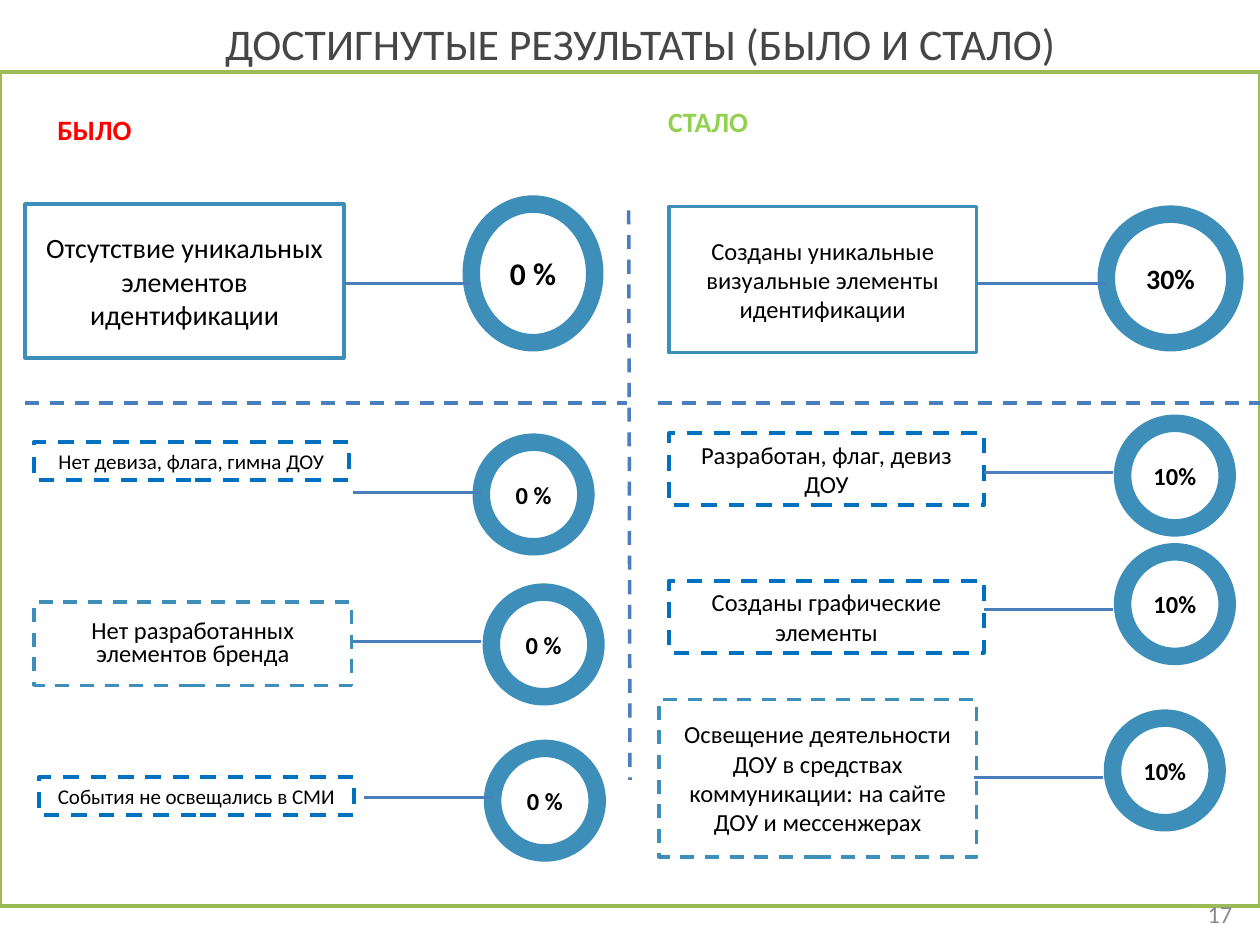
"""Build the slide that compares results before and after."""
from dataclasses import dataclass

from lxml.etree import SubElement
from pptx import Presentation
from pptx.dml.color import RGBColor
from pptx.enum.dml import MSO_LINE_DASH_STYLE as Dash
from pptx.enum.shapes import MSO_CONNECTOR_TYPE as Link, MSO_SHAPE as Preset
from pptx.enum.text import MSO_ANCHOR as Anchor, MSO_AUTO_SIZE as Fit, PP_ALIGN as Align
from pptx.oxml.ns import qn
from pptx.util import Inches, Pt

COLUMNS, ROWS = 100, 75
FONT = "Calibri"
BLACK = RGBColor(0x00, 0x00, 0x00)
WHITE = RGBColor(0xFF, 0xFF, 0xFF)
TITLE_GREY = RGBColor(0x46, 0x46, 0x46)
NUMBER_GREY = RGBColor(0x8C, 0x8C, 0x8C)
RED = RGBColor(0xFF, 0x00, 0x00)
LIME = RGBColor(0x92, 0xD0, 0x50)
FRAME_GREEN = RGBColor(0x9B, 0xBB, 0x59)
RING_BLUE = RGBColor(0x3D, 0x8E, 0xB9)
LINK_BLUE = RGBColor(0x4B, 0x7E, 0xBC)
EDGE_BLUE = RGBColor(0x00, 0x70, 0xC0)

deck = Presentation()
deck.slide_width, deck.slide_height = Inches(10), Inches(7.5)
page = deck.slides.add_slide(deck.slide_layouts[5])


@dataclass(frozen=True)
class Area:
    """A rectangle in grid columns and rows."""
    column: float
    row: float
    columns: float
    rows: float

    def place(self) -> tuple[int, int, int, int]:
        """Return left, top, width and height in slide units."""
        across, down = deck.slide_width / COLUMNS, deck.slide_height / ROWS
        return (round(self.column * across), round(self.row * down),
                round(self.columns * across), round(self.rows * down))


@dataclass(frozen=True)
class Result:
    """A statement, its share in a ring, and the line between them."""
    text: str
    share: str
    box: Area
    ring: Area
    link_column: float
    link_row: float
    text_size: int = 14
    share_size: int = 14
    edge: RGBColor = RING_BLUE
    edge_width: float = 2
    dashed: bool = True
    spacing: float = 1.0


def small_ring(column: float, row: float) -> Area:
    """Return the area of a ring of the common size."""
    return Area(column, row, 8.3, 8.3)


def write(shape, text: str, *, size: int, color: RGBColor = BLACK, bold: bool = False,
          align: Align = Align.CENTER, spacing: float = 1.0, wrap: bool = True) -> None:
    """Fill a shape with one formatted paragraph."""
    frame = shape.text_frame
    frame.word_wrap, frame.auto_size = wrap, Fit.NONE
    frame.vertical_anchor = Anchor.MIDDLE
    para = frame.paragraphs[0]
    para.alignment, para.line_spacing = align, spacing
    span = para.add_run()
    span.text = text
    span.font.name, span.font.size = FONT, Pt(size)
    span.font.bold, span.font.color.rgb = bold, color


def draw_text(text: str, area: Area, **style) -> None:
    """Add a text box."""
    write(page.shapes.add_textbox(*area.place()), text, **style)


def draw_shape(preset: Preset, area: Area, edge: RGBColor, width: float,
               filled: bool = False, dashed: bool = False):
    """Add an outlined shape without a shadow."""
    shape = page.shapes.add_shape(preset, *area.place())
    shape.shadow.inherit = False
    if filled:
        shape.fill.solid()
        shape.fill.fore_color.rgb = WHITE
    else:
        shape.fill.background()
    shape.line.color.rgb, shape.line.width = edge, Pt(width)
    if dashed:
        shape.line.dash_style = Dash.DASH
    return shape


def draw_line(area: Area, width: float, dashed: bool = False) -> None:
    """Add a straight line across an area's diagonal."""
    left, top, across, down = area.place()
    line = page.shapes.add_connector(Link.STRAIGHT, left, top, left + across, top + down)
    line.line.color.rgb, line.line.width = LINK_BLUE, Pt(width)
    if dashed:
        line.line.dash_style = Dash.DASH
    SubElement(line._element.spPr, qn("a:effectLst"))


def draw_result(result: Result) -> None:
    """Add the box, ring and line of one result."""
    box = draw_shape(Preset.RECTANGLE, result.box, result.edge, result.edge_width,
                     filled=not result.dashed, dashed=result.dashed)
    write(box, result.text, size=result.text_size, spacing=result.spacing)
    ring = draw_shape(Preset.FLOWCHART_CONNECTOR, result.ring, RING_BLUE, 10, filled=True)
    write(ring, result.share, size=result.share_size, bold=True, wrap=False)
    draw_line(Area(result.link_column, result.link_row, 10.2, 0), 1.5)


RESULTS = [
    Result("Отсутствие уникальных элементов идентификации", "0 %",
           Area(2, 16.2, 25.3, 12.2), Area(37.4, 16.2, 9.8, 11), 27.2, 22.5,
           text_size=16, share_size=18, dashed=False),
    Result("Нет девиза, флага, гимна ДОУ", "0 %", Area(2.7, 35.1, 25, 3),
           small_ring(38.2, 35.1), 28, 39.1, text_size=12, edge=EDGE_BLUE, edge_width=2.25),
    Result("Нет разработанных элементов бренда", "0 %", Area(2.7, 47.8, 25.2, 6.6),
           small_ring(39, 47), 28, 50.9, spacing=0.8),
    Result("События не освещались в СМИ", "0 %", Area(3.1, 61.7, 25, 3),
           small_ring(39.1, 59.4), 28.9, 63.3, text_size=12, edge=EDGE_BLUE, edge_width=2.25),
    Result("Созданы уникальные визуальные элементы идентификации", "30%",
           Area(53.1, 16.4, 24.4, 11.6), Area(87.8, 17, 10.2, 10.2), 77.6, 22.5,
           share_size=16, dashed=False),
    Result("Разработан, флаг, девиз ДОУ", "10%", Area(53.1, 34.4, 25, 5.7),
           small_ring(89.1, 33.6), 78.1, 37.5, edge=EDGE_BLUE, edge_width=2.25),
    Result("Созданы графические элементы", "10%", Area(53.1, 46.1, 25, 5.7),
           small_ring(89.1, 43.8), 78.1, 48.4, edge=EDGE_BLUE, edge_width=2.25),
    Result("Освещение деятельности ДОУ в средствах коммуникации: на сайте ДОУ и мессенжерах",
           "10%", Area(52.3, 55.5, 25.2, 12.5), small_ring(88.3, 57), 77.3, 61.7),
]
DIVIDERS = [Area(49.9, 16.7, 0.1, 45.2), Area(2, 32, 47.8, 0), Area(52.2, 32, 47.8, 0)]


def main() -> None:
    """Draw the slide and save it."""
    title = page.shapes.title
    title.left, title.top, title.width, title.height = Area(1.3, -0.8, 99, 8.4).place()
    write(title, "ДОСТИГНУТЫЕ РЕЗУЛЬТАТЫ (БЫЛО И СТАЛО)", size=25, color=TITLE_GREY)
    draw_shape(Preset.RECTANGLE, Area(0, 5.7, 100, 66.2), FRAME_GREEN, 2)
    draw_text("БЫЛО", Area(0.3, 8.4, 14.4, 3.7), size=16, color=RED, bold=True)
    draw_text("СТАЛО", Area(49.2, 7.8, 14, 3.7), size=16, color=LIME, bold=True)
    for divider in DIVIDERS:
        draw_line(divider, 2, dashed=True)
    for result in RESULTS:
        draw_result(result)
    draw_text("17", Area(94, 70.5, 4.8, 4), size=14, color=NUMBER_GREY, align=Align.RIGHT)
    deck.save("out.pptx")


if __name__ == "__main__":
    main()
